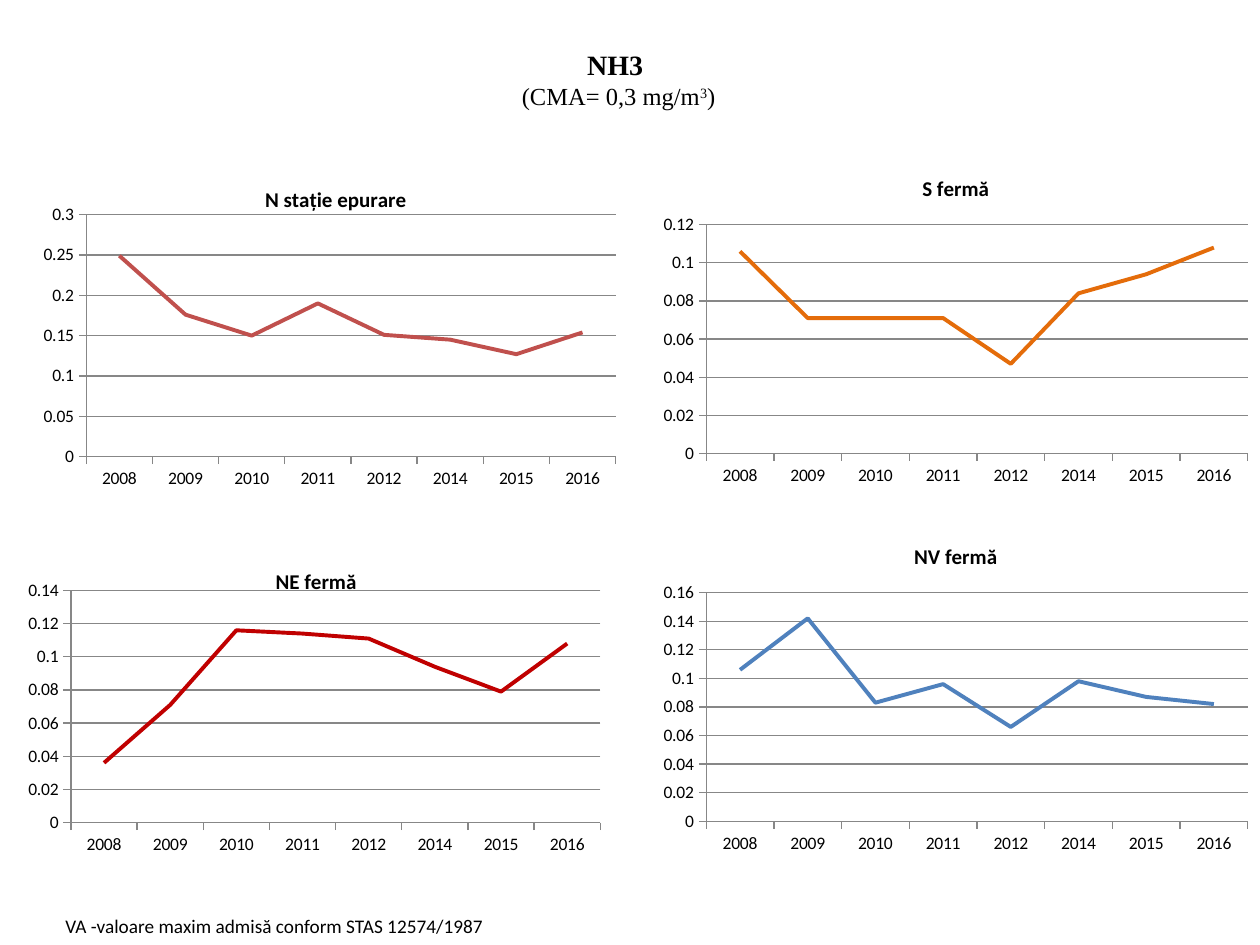
from dataclasses import dataclass
from typing import Optional

from lxml import etree
from pptx import Presentation
from pptx.chart.data import CategoryChartData
from pptx.dml.color import RGBColor
from pptx.enum.chart import XL_CHART_TYPE as ChartType, XL_TICK_MARK as TickMark
from pptx.enum.text import MSO_AUTO_SIZE as AutoSize, PP_ALIGN as Align
from pptx.oxml.ns import qn
from pptx.util import Inches, Pt

BLACK = RGBColor(0x00, 0x00, 0x00)
GREY = RGBColor(0x87, 0x87, 0x87)
DARK_RED = RGBColor(0xC0, 0x00, 0x00)
BRICK = RGBColor(0xC0, 0x50, 0x4D)
ORANGE = RGBColor(0xE4, 0x6C, 0x0A)
BLUE = RGBColor(0x4F, 0x81, 0xBD)

YEARS = ("2008", "2009", "2010", "2011", "2012", "2014", "2015", "2016")
CHART_WIDTH, CHART_HEIGHT = 4.83, 2.67
RIGHT_PLOT = (0.09, 0.2, 0.89, 0.68)


@dataclass(frozen=True)
class Station:
    name: str
    left: float
    top: float
    color: RGBColor
    plot: tuple[float, float, float, float]
    values: tuple[float, ...]
    title_at: Optional[tuple[float, float]] = None


STATIONS = (
    Station("NE fermă", 0.08, 4.42, DARK_RED, (0.1, 0.1, 0.87, 0.69),
            (0.036, 0.071, 0.116, 0.114, 0.111, 0.094, 0.079, 0.108), (0.43, 0.02)),
    Station("N stație epurare", 0.25, 1.33, BRICK, (0.09, 0.14, 0.87, 0.72),
            (0.249, 0.176, 0.15, 0.19, 0.151, 0.145, 0.127, 0.154)),
    Station("S fermă", 5.17, 1.25, ORANGE, RIGHT_PLOT,
            (0.106, 0.071, 0.071, 0.071, 0.047, 0.084, 0.094, 0.108)),
    Station("NV fermă", 5.17, 4.17, BLUE, RIGHT_PLOT,
            (0.106, 0.142, 0.083, 0.096, 0.066, 0.098, 0.087, 0.082)),
)


def write(paragraph, text: str, *, size: float, font: str, bold: bool = False,
          superscript: bool = False) -> None:
    run = paragraph.add_run()
    run.text = text
    run.font.size, run.font.name, run.font.bold = Pt(size), font, bold
    run.font.color.rgb = BLACK
    if superscript:
        run._r.get_or_add_rPr().set("baseline", "30000")


def add_box(slide, left: float, top: float, width: float, height: float, wrap: bool):
    box = slide.shapes.add_textbox(Inches(left), Inches(top), Inches(width), Inches(height))
    frame = box.text_frame
    frame.word_wrap = wrap
    frame.auto_size = AutoSize.SHAPE_TO_FIT_TEXT
    return frame


def place(parent, following: str, position: tuple[float, ...], inner: bool = False) -> None:
    """Give a chart part a manual layout, put before the element named following."""
    for old in parent.findall(qn("c:layout")):
        parent.remove(old)
    layout = etree.Element(qn("c:layout"))
    manual = etree.SubElement(layout, qn("c:manualLayout"))
    settings = [("layoutTarget", "inner")] if inner else []
    settings += [("xMode", "edge"), ("yMode", "edge")]
    settings += [(key, str(value)) for key, value in zip("xywh", position)]
    for tag, value in settings:
        etree.SubElement(manual, qn(f"c:{tag}")).set("val", value)
    parent.find(qn(following)).addprevious(layout)


def style_axis(axis) -> None:
    axis.major_tick_mark = TickMark.OUTSIDE
    axis.minor_tick_mark = TickMark.NONE
    axis.format.line.color.rgb = GREY
    axis.format.line.width = Pt(0.75)


def add_station_chart(slide, station: Station) -> None:
    data = CategoryChartData(number_format="General")
    data.categories = YEARS
    data.add_series("Series 1", station.values)
    chart = slide.shapes.add_chart(
        ChartType.LINE_STACKED, Inches(station.left), Inches(station.top),
        Inches(CHART_WIDTH), Inches(CHART_HEIGHT), data).chart
    chart.has_legend = False
    chart.font.size, chart.font.name = Pt(10), "Calibri"
    chart.font.color.rgb = BLACK

    title = chart.chart_title
    write(title.text_frame.paragraphs[0], station.name, size=12, font="Calibri", bold=True)
    title.include_in_layout = False
    if station.title_at:
        place(title._element, "c:overlay", station.title_at)
    plot_area = chart._chartSpace.chart.plotArea
    place(plot_area, "c:lineChart", station.plot, inner=True)

    style_axis(chart.category_axis)
    style_axis(chart.value_axis)
    chart.value_axis.has_major_gridlines = True
    gridline = chart.value_axis.major_gridlines.format.line
    gridline.color.rgb, gridline.width = GREY, Pt(0.75)

    chart.plots[0].vary_by_categories = False
    series = chart.plots[0].series[0]
    series.smooth = False
    series.format.line.color.rgb = station.color
    series.format.line.width = Pt(2.25)


def main() -> None:
    deck = Presentation()
    deck.slide_width, deck.slide_height = Inches(10), Inches(7.5)
    slide = deck.slides.add_slide(deck.slide_layouts[6])

    for station in STATIONS:
        add_station_chart(slide, station)

    heading = add_box(slide, 4.03, 0.33, 1.76, 0.61, wrap=False)
    gas, limit = heading.paragraphs[0], heading.add_paragraph()
    gas.alignment = limit.alignment = Align.CENTER
    write(gas, "NH3 ", size=16, font="Times New Roman", bold=True)
    for text, raised in (("(CMA= 0,3 mg/m", False), ("3", True), (")", False)):
        write(limit, text, size=14, font="Times New Roman", superscript=raised)

    footnote = add_box(slide, 0.42, 7.21, 4.25, 0.29, wrap=True)
    write(footnote.paragraphs[0], "VA -valoare maxim admisă conform STAS 12574/1987",
          size=11, font="Calibri")

    deck.save("out.pptx")


if __name__ == "__main__":
    main()
